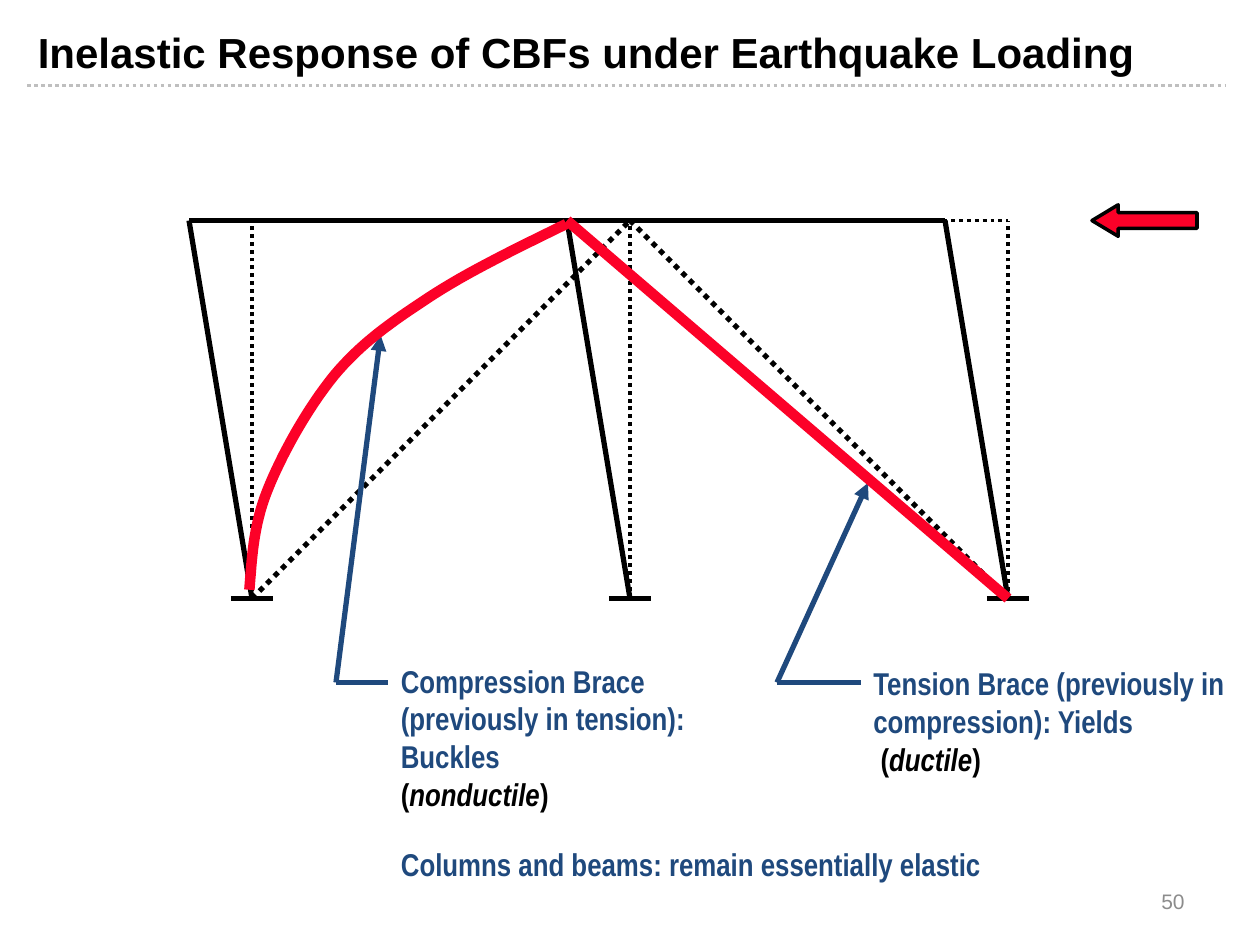
from lxml import etree
from pptx import Presentation
from pptx import util as u
from pptx.dml.color import RGBColor
from pptx.enum import dml, shapes, text
from pptx.oxml import ns

BLACK = RGBColor(0x00, 0x00, 0x00)
NAVY = RGBColor(0x1F, 0x49, 0x7D)
RED = RGBColor(0xFC, 0x01, 0x28)
RULE_GRAY = RGBColor(0xBF, 0xBF, 0xBF)
NUMBER_GRAY = RGBColor(0x8C, 0x8C, 0x8C)

LABEL = {"name": "Arial Narrow", "size": u.Pt(18), "bold": True}
TITLE = {"name": "Arial", "size": u.Pt(24), "bold": True}
NUMBER = {"name": "Arial", "size": u.Pt(12), "bold": False}

BASES = (144, 360, 576)
GROUND, ROOF = 342, 126
SWAY = 36
FOOT = 12
LEADER_Y = 390


def bezier(start, controls, steps=16):
    points = [start]
    for a, b, end in controls:
        first = points[-1]
        for step in range(1, steps + 1):
            t = step / steps
            weights = ((1 - t) ** 3, 3 * t * (1 - t) ** 2, 3 * t**2 * (1 - t), t**3)
            points.append(tuple(
                sum(w * p[axis] for w, p in zip(weights, (first, a, b, end)))
                for axis in (0, 1)
            ))
    return points


class FrameSlide:
    def __init__(self, deck):
        self.slide = deck.slides.add_slide(deck.slide_layouts[6])

    def stroke(self, shape, color, width, dotted=False):
        shape.line.color.rgb = color
        shape.line.width = u.Pt(width)
        if dotted:
            shape.line.dash_style = dml.MSO_LINE.ROUND_DOT

    def line(self, start, end, color=BLACK, width=3, dotted=False, arrow=False):
        connector = self.slide.shapes.add_connector(
            shapes.MSO_CONNECTOR.STRAIGHT, *(u.Pt(v) for v in (*start, *end))
        )
        self.stroke(connector, color, width, dotted)
        if arrow:
            etree.SubElement(connector.line._get_or_add_ln(), ns.qn("a:headEnd"), type="triangle")
        etree.SubElement(connector._element.spPr, ns.qn("a:effectLst"))

    def curve(self, points, color, width):
        outline = [(u.Pt(x), u.Pt(y)) for x, y in points]
        builder = self.slide.shapes.build_freeform(*outline[0])
        builder.add_line_segments(outline[1:], close=False)
        brace = builder.convert_to_shape()
        brace.shadow.inherit = False
        brace.fill.background()
        self.stroke(brace, color, width)

    def load_arrow(self, box):
        load = self.slide.shapes.add_shape(shapes.MSO_SHAPE.RIGHT_ARROW, *(u.Pt(v) for v in box))
        load.rotation = 180
        load.adjustments[0], load.adjustments[1] = 0.5, 0.83
        load.shadow.inherit = False
        load.fill.solid()
        load.fill.fore_color.rgb = RED
        self.stroke(load, BLACK, 2)

    def label(self, box, lines, style=LABEL, align=text.PP_ALIGN.LEFT, **frame_format):
        frame = self.slide.shapes.add_textbox(*(u.Pt(v) for v in box)).text_frame
        for name, value in {"word_wrap": True, **frame_format}.items():
            setattr(frame, name, value)
        paragraph = frame.paragraphs[0]
        paragraph.alignment = align
        for index, pieces in enumerate(lines):
            if index:
                paragraph.add_line_break()
            for wording, color, italic in pieces:
                run = paragraph.add_run()
                run.text = wording
                for name, value in {**style, "italic": italic}.items():
                    setattr(run.font, name, value)
                run.font.color.rgb = color


def draw_original_frame(page):
    for base in BASES:
        page.line((base, GROUND), (base, ROOF), width=2.25, dotted=True)
    for left, right in zip(BASES, BASES[1:]):
        page.line((left, ROOF), (right, ROOF), width=2.25, dotted=True)
    for base in BASES:
        page.line((base - FOOT, GROUND), (base + FOOT, GROUND))
    left, middle, right = BASES
    page.line((left, GROUND), (middle, ROOF), dotted=True)
    page.line((middle, ROOF), (right, GROUND), dotted=True)


def draw_notes(page):
    fit = {"auto_size": text.MSO_AUTO_SIZE.SHAPE_TO_FIT_TEXT}
    braces = (
        (192, 222, (217.5, 191.5), (222, 374.5, 222, 94),
         "Compression Brace (previously in tension): Buckles", "(", "nonductile"),
        (444, 492, (496, 276), (492, 376, 222, 72),
         "Tension Brace (previously in compression): Yields", " (", "ductile"),
    )
    for elbow, end, tip, box, behavior, opening, ductility in braces:
        page.label(box, [
            [(behavior, NAVY, False)],
            [(opening, BLACK, False), (ductility, BLACK, True), (")", BLACK, False)],
        ], **fit)
        page.line(tip, (elbow, LEADER_Y), NAVY, arrow=True)
        page.line((elbow, LEADER_Y), (end, LEADER_Y), NAVY)
    page.label((222, 479.5, 408, 29),
               [[("Columns and beams: remain essentially elastic", NAVY, False)]], **fit)


def draw_swayed_frame(page):
    for base in reversed(BASES):
        page.line((base, GROUND), (base - SWAY, ROOF))
    page.line((BASES[2], GROUND), (BASES[1] - SWAY, ROOF), RED, 6)
    page.curve(bezier((142.5, 337), [
        ((144, 319.5), (144.5, 301.5), (152.5, 281)),
        ((160.5, 260.5), (175.5, 233.5), (191, 214.5)),
        ((206.5, 196), (223, 184.5), (245, 170)),
        ((267, 155.5), (295, 142), (323.5, 128)),
    ]), RED, 6)


def main():
    deck = Presentation()
    deck.slide_width, deck.slide_height = u.Pt(720), u.Pt(540)
    page = FrameSlide(deck)
    page.line((15.5, 49), (700, 49), RULE_GRAY, 2, dotted=True)
    draw_original_frame(page)
    page.load_arrow((624, 117, 60, 18))
    page.line((BASES[0] - SWAY, ROOF), (BASES[2] - SWAY, ROOF))
    draw_notes(page)
    draw_swayed_frame(page)
    page.label((14.5, 11.5, 646.5, 31.5),
               [[("Inelastic Response of CBFs under Earthquake Loading", BLACK, False)]], TITLE)
    page.label((516, 500.5, 168, 29), [[("50", NUMBER_GRAY, False)]], NUMBER,
               text.PP_ALIGN.RIGHT, vertical_anchor=text.MSO_ANCHOR.MIDDLE)
    deck.save("out.pptx")


if __name__ == "__main__":
    main()
